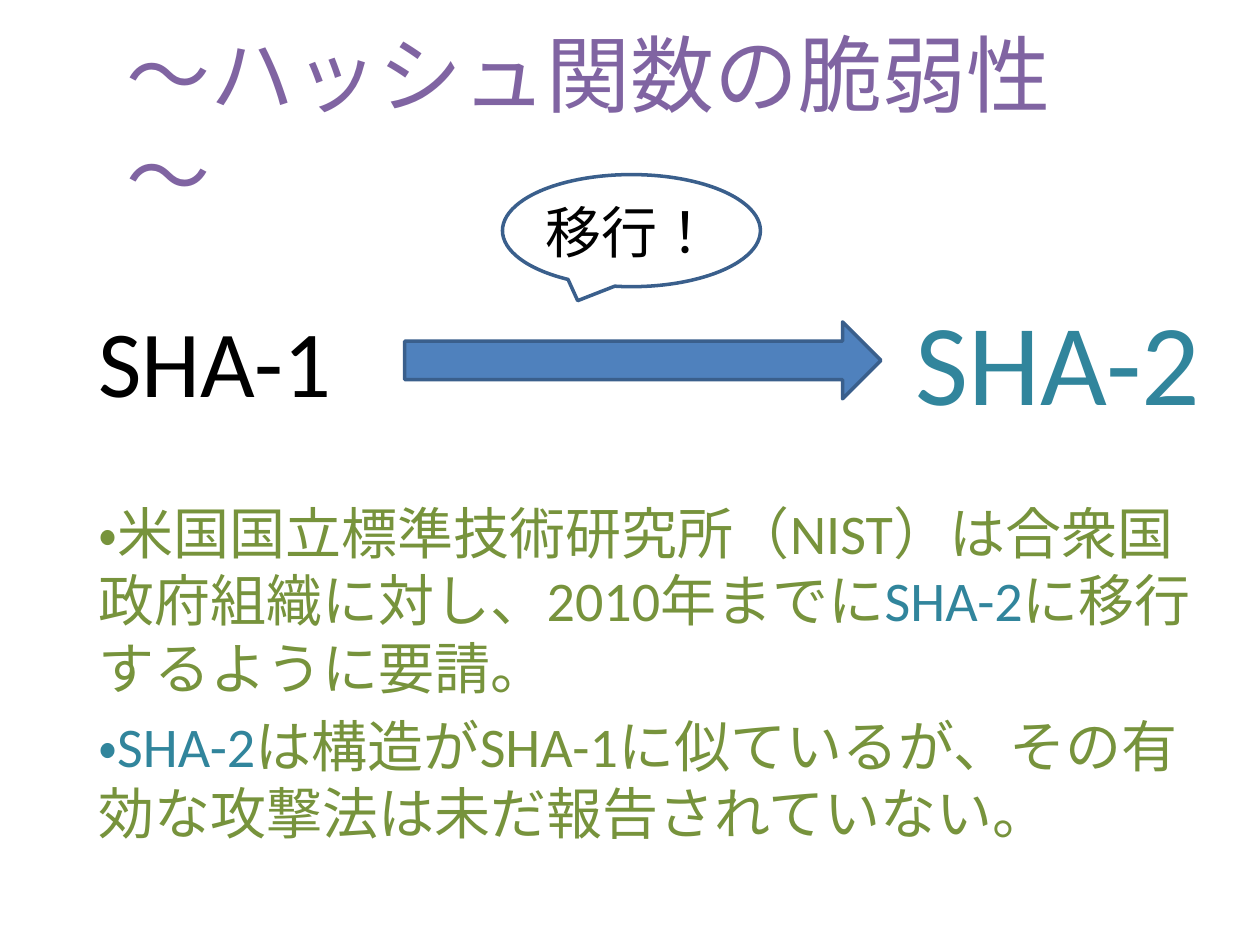
from pptx import Presentation
from pptx.dml.color import RGBColor
from pptx.enum.lang import MSO_LANGUAGE_ID
from pptx.enum.shapes import MSO_SHAPE
from pptx.util import Cm, Pt

COLORS = {
    "title": "8064A2",
    "body": "77933C",
    "sha2": "31859C",
    "black": "000000",
    "arrow": "4F81BD",
    "outline": "3A5F8C",
}


def rgb(name):
    return RGBColor.from_string(COLORS[name])


def add_text(slide, box, size, paragraphs, space_before=0):
    """Add a wrapped text box; each paragraph is a list of (text, colour) runs."""
    font = {
        "name": "Calibri",
        "size": Pt(size),
        "language_id": MSO_LANGUAGE_ID.JAPANESE,
    }
    tf = slide.shapes.add_textbox(*map(Cm, box)).text_frame
    tf.word_wrap = True
    for i, runs in enumerate(paragraphs):
        p = tf.add_paragraph() if i else tf.paragraphs[0]
        p.space_before = Pt(space_before)
        for text, color in runs:
            r = p.add_run()
            r.text = text
            for name, value in font.items():
                setattr(r.font, name, value)
            r.font.color.rgb = rgb(color)


def add_outlined_shape(slide, kind, box, fill=None):
    sp = slide.shapes.add_shape(kind, *map(Cm, box))
    sp.shadow.inherit = False
    if fill:
        sp.fill.solid()
        sp.fill.fore_color.rgb = rgb(fill)
    else:
        sp.fill.background()
    sp.line.color.rgb = rgb("outline")
    sp.line.width = Pt(2)


def main():
    prs = Presentation()
    prs.slide_width, prs.slide_height = Cm(25.4), Cm(19.05)
    slide = prs.slides.add_slide(prs.slide_layouts[6])

    add_text(slide, (1.73, 9.93, 22.86, 7.6), 32, [
        [("・米国国立標準技術研究所（NIST）は合衆国政府組織に対し、2010年までに", "body"),
         ("SHA-2", "sha2"),
         ("に移行するように要請。", "body")],
        [("・SHA-2", "sha2"),
         ("は構造がSHA-1に似ているが、その有効な攻撃法は未だ報告されていない。", "body")],
    ], space_before=6.4)

    add_text(slide, (1.73, 5.98, 7, 2.57), 54, [[("SHA-1", "black")]])
    add_outlined_shape(slide, MSO_SHAPE.RIGHT_ARROW, (8.16, 6.49, 9.6, 1.55), "arrow")
    add_text(slide, (18.2, 5.72, 7.2, 3.07), 66, [[("SHA-2", "sha2")]])

    add_outlined_shape(slide, MSO_SHAPE.OVAL_CALLOUT, (10.13, 3.52, 5.2, 2.26))
    add_text(slide, (10.74, 3.86, 4, 1.63), 32, [[("移行！", "black")]])

    add_text(slide, (2.31, 0.33, 20.6, 2.31), 48, [[("～ハッシュ関数の脆弱性～", "title")]])

    prs.save("out.pptx")


if __name__ == "__main__":
    main()
